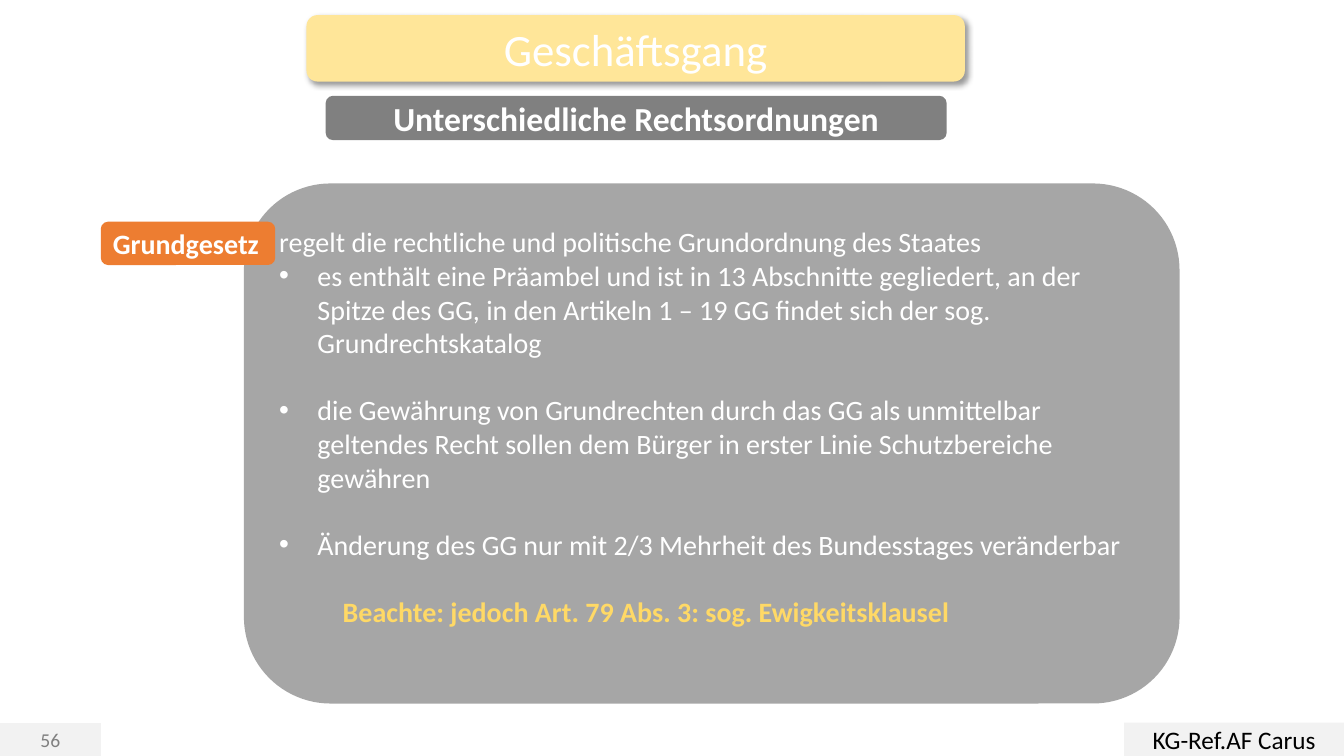
from lxml.etree import SubElement
from pptx import Presentation
from pptx.dml.color import RGBColor
from pptx.enum.shapes import MSO_SHAPE
from pptx.enum.text import MSO_ANCHOR, PP_ALIGN
from pptx.oxml.ns import qn
from pptx.util import Inches, Pt

WHITE = RGBColor(0xFF, 0xFF, 0xFF)
BLACK = RGBColor(0x00, 0x00, 0x00)
PALE_GRAY = RGBColor(0xF2, 0xF2, 0xF2)
MID_GRAY = RGBColor(0xA6, 0xA6, 0xA6)
DARK_GRAY = RGBColor(0x80, 0x80, 0x80)
CREAM = RGBColor(0xFF, 0xE6, 0x99)
GOLD = RGBColor(0xFF, 0xD9, 0x66)
ORANGE = RGBColor(0xED, 0x7D, 0x31)

SLIDE_WIDTH, SLIDE_HEIGHT = Inches(13.33), Inches(7.5)
FONT = "Calibri"
BODY_SIZE = 20
BODY_GAP = 24
BULLET_INDENT = Inches(0.38)
NOTE_INDENT = Inches(0.63)

INTRO = "regelt die rechtliche und politische Grundordnung des Staates"
POINTS = [
    "es enthält eine Präambel und ist in 13 Abschnitte gegliedert, an der Spitze "
    "des GG, in den Artikeln 1 – 19 GG findet sich der sog. Grundrechtskatalog",
    "die Gewährung von Grundrechten durch das GG als unmittelbar geltendes Recht "
    "sollen dem Bürger in erster Linie Schutzbereiche gewähren",
    "Änderung des GG nur mit 2/3 Mehrheit des Bundesstages veränderbar",
]
NOTE = "Beachte: jedoch Art. 79 Abs. 3: sog. Ewigkeitsklausel"


def across(percent):
    return round(SLIDE_WIDTH * percent / 100)


def down(percent):
    return round(SLIDE_HEIGHT * percent / 100)


def add_panel(slide, left, top, width, height, fill, kind=MSO_SHAPE.ROUNDED_RECTANGLE):
    panel = slide.shapes.add_shape(
        kind, across(left), down(top), across(width), down(height))
    panel.shadow.inherit = False
    panel.fill.solid()
    panel.fill.fore_color.rgb = fill
    panel.line.fill.background()
    panel.text_frame.word_wrap = True
    panel.text_frame.vertical_anchor = MSO_ANCHOR.MIDDLE
    return panel


def write(paragraph, text, size, color=WHITE, bold=False, align=PP_ALIGN.CENTER):
    paragraph.text = text
    paragraph.alignment = align
    paragraph.font.name = FONT
    paragraph.font.size = Pt(size)
    paragraph.font.bold = bold
    paragraph.font.color.rgb = color


def add_label(slide, place, fill, text, size, kind=MSO_SHAPE.ROUNDED_RECTANGLE, **style):
    label = add_panel(slide, *place, fill, kind)
    write(label.text_frame.paragraphs[0], text, size, **style)
    return label


def indent(paragraph, margin, bullet=None):
    properties = paragraph._p.get_or_add_pPr()
    properties.set("marL", str(margin))
    if bullet:
        properties.set("indent", str(-margin))
        SubElement(properties, qn("a:buFont"), typeface="Arial")
        SubElement(properties, qn("a:buChar"), char=bullet)


def add_drop_shadow(panel):
    effects = panel._element.spPr.find(qn("a:effectLst"))
    shadow = SubElement(
        effects, qn("a:outerShdw"), blurRad=str(Pt(4)), dist=str(Pt(3)),
        dir=str(45 * 60000), algn="tl", rotWithShape="0")
    tint = SubElement(shadow, qn("a:srgbClr"), val=str(BLACK))
    SubElement(tint, qn("a:alpha"), val="40000")


def add_explanation(slide):
    frame = add_panel(slide, 18.15, 24.27, 69.62, 68.8, MID_GRAY).text_frame
    frame.vertical_anchor = MSO_ANCHOR.TOP
    frame.margin_top = Inches(0.16)
    write(frame.paragraphs[0], INTRO, BODY_SIZE, align=PP_ALIGN.LEFT)
    for number, point in enumerate(POINTS):
        paragraph = frame.add_paragraph()
        write(paragraph, point, BODY_SIZE, align=PP_ALIGN.LEFT)
        paragraph.space_before = Pt(BODY_GAP if number else 0)
        indent(paragraph, BULLET_INDENT, "•")
    note = frame.add_paragraph()
    write(note, NOTE, BODY_SIZE, GOLD, bold=True, align=PP_ALIGN.LEFT)
    note.space_before = Pt(BODY_GAP)
    indent(note, NOTE_INDENT)


def main():
    deck = Presentation()
    deck.slide_width, deck.slide_height = SLIDE_WIDTH, SLIDE_HEIGHT
    slide = deck.slides.add_slide(deck.slide_layouts[6])

    add_explanation(slide)
    page_number = add_label(slide, (0, 95.73, 7.5, 4.27), PALE_GRAY, "56", 14,
                            MSO_SHAPE.RECTANGLE, color=DARK_GRAY)
    page_number.line.color.rgb = PALE_GRAY
    page_number.line.width = Pt(1)
    add_label(slide, (83.65, 95.6, 16.35, 4.4), PALE_GRAY, "KG-Ref.AF Carus", 18,
              MSO_SHAPE.RECTANGLE, color=BLACK)
    add_label(slide, (24.23, 12.67, 46.21, 5.87), DARK_GRAY,
              "Unterschiedliche Rechtsordnungen", 24, bold=True)
    title = add_label(slide, (22.8, 2, 48.99, 8.8), CREAM, "Geschäftsgang", 32)
    add_drop_shadow(title)
    add_label(slide, (7.5, 29.33, 12.98, 5.73), ORANGE, "Grundgesetz", BODY_SIZE,
              bold=True, align=PP_ALIGN.LEFT)

    deck.save("out.pptx")


if __name__ == "__main__":
    main()
